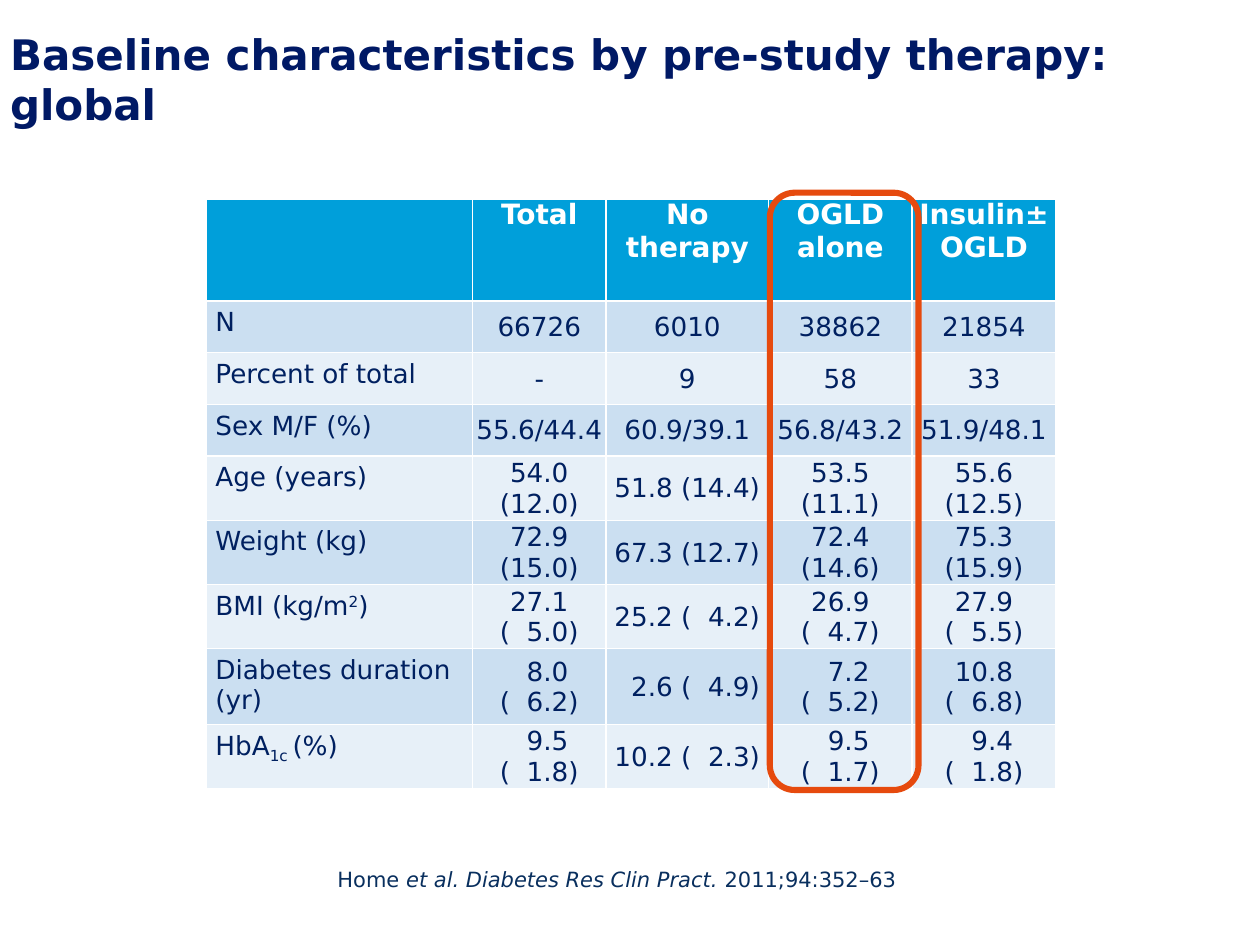
"""Build the slide of baseline characteristics by pre-study therapy."""
from pptx import Presentation
from pptx.dml.color import RGBColor
from pptx.enum import shapes, text
from pptx.util import Inches, Pt


def style(font, size, color, bold=False):
    font.name = "DejaVu Sans"
    font.size = Pt(size)
    font.bold = bold
    font.color.rgb = RGBColor.from_string(color)


def set_margins(target, left, top, right, bottom):
    target.margin_left, target.margin_top = Inches(left), Inches(top)
    target.margin_right, target.margin_bottom = Inches(right), Inches(bottom)


HEADINGS = ["", "Total", "No therapy", "OGLD alone", "Insulin±\vOGLD"]
MEASURES = [
    (["N"], "66726", "6010", "38862", "21854"),
    (["Percent of total"], "-", "9", "58", "33"),
    (["Sex M/F (%)"], "55.6/44.4", "60.9/39.1", "56.8/43.2", "51.9/48.1"),
    (["Age (years)"], "54.0 (12.0)", "51.8 (14.4)", "53.5 (11.1)", "55.6 (12.5)"),
    (["Weight (kg)"], "72.9 (15.0)", "67.3 (12.7)", "72.4 (14.6)", "75.3 (15.9)"),
    (["BMI (kg/m", "2", ")"], "27.1 (  5.0)", "25.2 (  4.2)", "26.9 (  4.7)", "27.9 (  5.5)"),
    (["Diabetes duration (yr)"], "  8.0 (  6.2)", "  2.6 (  4.9)", "  7.2 (  5.2)", "10.8 (  6.8)"),
    (["HbA", "1c ", "(%)"], "  9.5 (  1.8)", "10.2 (  2.3)", "  9.5 (  1.7)", "  9.4 (  1.8)"),
]
BASELINES = {"2": "30000", "1c ": "-25000"}
COLUMN_WIDTHS = [2.11, 1.06, 1.29, 1.14, 1.14]
ROW_HEIGHTS = [0.81, 0.41, 0.41, 0.41, 0.51, 0.51, 0.51, 0.6, 0.51]

prs = Presentation()
prs.slide_width, prs.slide_height = Inches(10), Inches(7.5)
slide = prs.slides.add_slide(prs.slide_layouts[5])

title = slide.shapes.title
title.left, title.top = Inches(-0.02), Inches(0)
title.width, title.height = Inches(10.11), Inches(1.25)
title.text_frame.text = "Baseline characteristics by pre-study therapy: global"
title.text_frame.vertical_anchor = text.MSO_ANCHOR.MIDDLE
title.text_frame.auto_size = text.MSO_AUTO_SIZE.NONE
heading = title.text_frame.paragraphs[0]
heading.alignment = text.PP_ALIGN.LEFT
style(heading.font, 24, "001965", bold=True)

characteristics = slide.shapes.add_table(
    len(ROW_HEIGHTS), len(COLUMN_WIDTHS),
    Inches(1.64), Inches(1.58), Inches(6.75), Inches(4.67)).table
for column, width in zip(characteristics.columns, COLUMN_WIDTHS):
    column.width = Inches(width)
for row, height in zip(characteristics.rows, ROW_HEIGHTS):
    row.height = Inches(height)

for r, values in enumerate([HEADINGS] + MEASURES):
    for c, value in enumerate(values):
        cell = characteristics.cell(r, c)
        cell.fill.solid()
        band = "009FDA" if r == 0 else ("E7F0F8", "CBDFF1")[r % 2]
        cell.fill.fore_color.rgb = RGBColor.from_string(band)
        entry = cell.text_frame.paragraphs[0]
        if r and c == 0:
            set_margins(cell, 0.07, 0.05, 0.07, 0.05)
            entry.space_before = Pt(3)
            for part in value:
                run = entry.add_run()
                run.text = part
                if part in BASELINES:
                    run.font._element.set("baseline", BASELINES[part])
        else:
            entry.text = value
            entry.alignment = text.PP_ALIGN.CENTER
            if r:
                set_margins(cell, 0.01, 0.01, 0.01, 0)
                cell.vertical_anchor = text.MSO_ANCHOR.MIDDLE
            else:
                set_margins(cell, 0, 0, 0, 0)
        if r:
            style(entry.font, 15, "002060")
        else:
            style(entry.font, 16, "FFFFFF", bold=True)

highlight = slide.shapes.add_shape(
    shapes.MSO_SHAPE.ROUNDED_RECTANGLE,
    Inches(6.11), Inches(1.53), Inches(1.18), Inches(4.74))
highlight.shadow.inherit = False
highlight.fill.background()
highlight.line.color.rgb = RGBColor.from_string("E64A0E")
highlight.line.width = Pt(3.5)

citation = slide.shapes.add_textbox(Inches(2.58), Inches(6.83), Inches(4.8), Inches(0.5))
citation.text_frame.word_wrap = True
reference = citation.text_frame.paragraphs[0]
style(reference.font, 12, "092F5E")
for part, italic in [("Home ", False), ("et al. Diabetes Res Clin Pract. ", True),
                     ("2011;94:352–63", False)]:
    run = reference.add_run()
    run.text = part
    run.font.italic = italic

prs.save("out.pptx")
